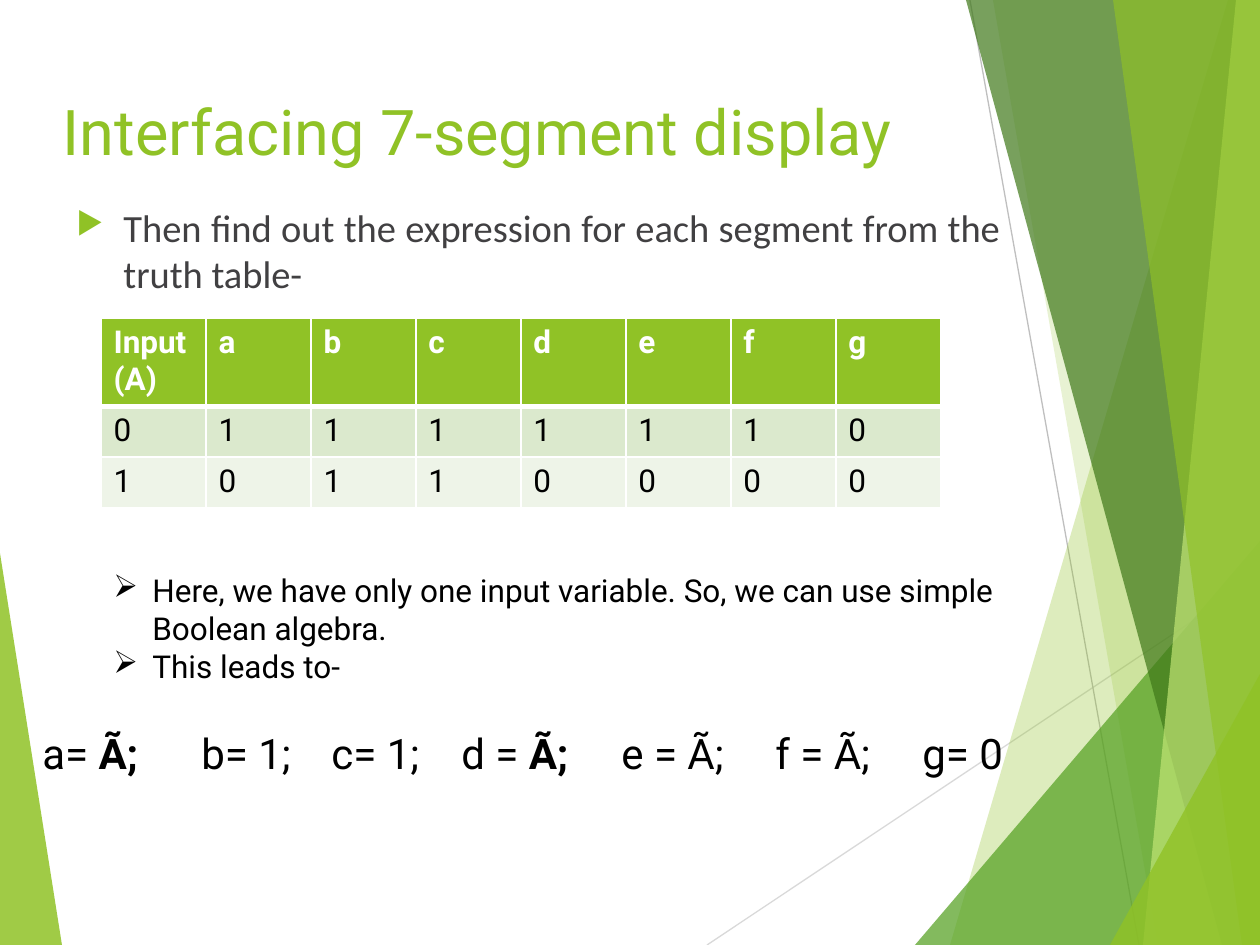
"""Build the slide on interfacing a 7-segment display."""
from lxml import etree
from pptx import Presentation
from pptx.dml.color import RGBColor
from pptx.enum.shapes import MSO_CONNECTOR
from pptx.enum.text import MSO_ANCHOR, MSO_AUTO_SIZE, PP_ALIGN
from pptx.oxml.ns import qn
from pptx.util import Pt

STRAIGHT = MSO_CONNECTOR.STRAIGHT
TOP = MSO_ANCHOR.TOP
NO_AUTOFIT = MSO_AUTO_SIZE.NONE
LEFT, JUSTIFY = PP_ALIGN.LEFT, PP_ALIGN.JUSTIFY

SCALE = 914400 / 126
WIDTH, HEIGHT = 1260, 945
TITLE_ONLY = 5
COLORS = {
    "lime": "90C226", "green": "54A021", "forest": "3F7819", "pale": "C0E474",
    "light_rule": "D9D9D9", "rule": "BFBFBF", "body": "414042",
    "black": "000000", "white": "FFFFFF", "band": "DBE9CD", "band_pale": "EEF4E8",
}
TRUTH_TABLE = [
    ["Input (A)", "a", "b", "c", "d", "e", "f", "g"],
    ["0", "1", "1", "1", "1", "1", "1", "0"],
    ["1", "0", "1", "1", "0", "0", "0", "0"],
]
NOTES = [
    "Here, we have only one input variable. So, we can use simple Boolean algebra.",
    "This leads to-",
]
EQUATIONS = [
    ("a=", False), (" Ã;", True), ("\tb= 1;\tc= 1;\td =", False),
    (" Ã;", True), ("\te = Ã;\tf = Ã;\tg= 0", False),
]
EQUATION_TABS = [159, 289, 419, 579, 733, 880]


def px(length):
    """Turn px into EMU."""
    return round(length * SCALE)


def rgb(color):
    """Return a named colour."""
    return RGBColor.from_string(COLORS[color])


def add_xml(parent, tag, **attributes):
    """Append a DrawingML element and return it."""
    names = {key: str(value) for key, value in attributes.items()}
    return etree.SubElement(parent, qn(f"a:{tag}"), names)


def write_text(paragraph, text, size=18, font="Roboto", color="black", bold=False):
    """Add a formatted run to a paragraph."""
    run = paragraph.add_run()
    run.text = text
    run.font.size, run.font.name, run.font.bold = Pt(size), font, bold
    run.font.color.rgb = rgb(color)


def add_bullet(paragraph, mark, margin, hang, color="black", percent=100):
    """Give a paragraph a hanging bullet."""
    properties = paragraph._p.get_or_add_pPr()
    properties.set("marL", str(px(margin)))
    properties.set("indent", str(-px(hang)))
    add_xml(add_xml(properties, "buClr"), "srgbClr", val=COLORS[color])
    add_xml(properties, "buSzPct", val=percent * 1000)
    add_xml(properties, "buChar", char=mark)


def add_frame(slide, box):
    """Add a wrapping text box and return its text frame."""
    frame = slide.shapes.add_textbox(*map(px, box)).text_frame
    frame.word_wrap = True
    return frame


def add_facet(slide, points, color, opacity):
    """Draw a translucent polygon."""
    builder = slide.shapes.build_freeform(*points[0], scale=SCALE)
    builder.add_line_segments(points[1:], close=True)
    facet = builder.convert_to_shape()
    facet.shadow.inherit = False
    facet.line.fill.background()
    facet.fill.solid()
    facet.fill.fore_color.rgb = rgb(color)
    tint = facet._element.spPr.find(qn("a:solidFill"))[0]
    add_xml(tint, "alpha", val=opacity * 1000)


def add_rule(slide, start, end, color):
    """Draw a thin decorative line."""
    rule = slide.shapes.add_connector(STRAIGHT, *map(px, start + end))
    rule.line.color.rgb = rgb(color)
    rule.line.width = Pt(0.75)
    add_xml(rule._element.spPr, "effectLst")


def add_decoration(slide, box):
    """Draw the facets and rules along the slide edges."""
    left, top, width, height = box
    right, bottom = left + width, top + height

    def band(upper, lower, color, opacity):
        """Fill from a slanted edge to the right side."""
        edge = [(left + upper, top), (left + lower, bottom)]
        add_facet(slide, edge + [(right, bottom), (right, top)], color, opacity)

    def wedge(start, rise, color, opacity):
        """Fill the lower right corner."""
        points = [(left + start, bottom), (right, top + rise), (right, bottom)]
        add_facet(slide, points, color, opacity)

    add_facet(slide, [(left, top + 553), (left + 62, bottom), (left, bottom)], "lime", 85)
    add_rule(slide, (left + 707, bottom), (right, top + 576), "light_rule")
    add_rule(slide, (left + 970, top), (left + 1139, bottom), "rule")
    band(1228, 950, "lime", 30)
    band(993, 1158, "lime", 20)
    wedge(915, 541, "green", 72)
    band(966, 1222, "forest", 70)
    band(1236, 1143, "pale", 70)
    band(1113, 1242, "lime", 65)
    wedge(1110, 674, "lime", 80)


def add_title(slide, box):
    """Place and format the title."""
    title = slide.shapes.title
    title.left, title.top, title.width, title.height = map(px, box)
    frame = title.text_frame
    frame.vertical_anchor, frame.auto_size = TOP, NO_AUTOFIT
    heading = frame.paragraphs[0]
    heading.alignment = LEFT
    write_text(heading, "Interfacing 7-segment display", size=36, color="lime")


def add_instruction(slide, box):
    """Add the bulleted instruction above the table."""
    instruction = add_frame(slide, box).paragraphs[0]
    instruction.alignment, instruction.space_before = JUSTIFY, Pt(10)
    add_bullet(instruction, "▶", 111, 47, "lime", 80)
    write_text(instruction, "Then find out the expression for each segment from the truth table-",
               size=22, font="Calibri", color="body")


def format_cell(cell, text, row):
    """Fill, border and write one truth table cell."""
    properties = cell._tc.get_or_add_tcPr()
    widths = {"lnL": 1, "lnR": 1, "lnT": 3 if row == 1 else 1, "lnB": 3 if row == 0 else 1}
    for side, width in widths.items():
        border = add_xml(properties, side, w=Pt(width))
        add_xml(add_xml(border, "solidFill"), "srgbClr", val=COLORS["white"])
    cell.fill.solid()
    cell.fill.fore_color.rgb = rgb(("lime", "band", "band_pale")[row])
    header = row == 0
    write_text(cell.text_frame.paragraphs[0], text, bold=header,
               color="white" if header else "black")


def add_truth_table(slide, box):
    """Add the truth table of the segments."""
    table = slide.shapes.add_table(len(TRUTH_TABLE), len(TRUTH_TABLE[0]), *map(px, box)).table
    for column in table.columns:
        column.width = px(box[2] / len(TRUTH_TABLE[0]))
    for row, height in zip(table.rows, (85, 51, 51)):
        row.height = px(height)
    for row, values in enumerate(TRUTH_TABLE):
        for column, value in enumerate(values):
            format_cell(table.cell(row, column), value, row)


def add_notes_list(slide, box):
    """Add the bulleted remarks below the table."""
    frame = add_frame(slide, box)
    for index, note in enumerate(NOTES):
        remark = frame.add_paragraph() if index else frame.paragraphs[0]
        add_bullet(remark, "➢", 39, 39)
        write_text(remark, note)


def add_equations(slide, box):
    """Add the row of segment expressions at tab stops."""
    equations = add_frame(slide, box).paragraphs[0]
    stops = add_xml(equations._p.get_or_add_pPr(), "tabLst")
    for position in EQUATION_TABS:
        add_xml(stops, "tab", pos=px(position), algn="l")
    for text, bold in EQUATIONS:
        write_text(equations, text, size=24, bold=bold)


def main():
    """Build and save the presentation."""
    deck = Presentation()
    deck.slide_width, deck.slide_height = px(WIDTH), px(HEIGHT)
    slide = deck.slides.add_slide(deck.slide_layouts[TITLE_ONLY])
    add_decoration(slide, (0, 0, WIDTH, HEIGHT))
    add_title(slide, (50, 86, 942, 181))
    add_instruction(slide, (0, 198, 1013, 552))
    add_truth_table(slide, (101, 318, 840, 187))
    add_notes_list(slide, (101, 565, 912, 127))
    add_equations(slide, (30, 721, 1109, 115))
    deck.save("out.pptx")


if __name__ == "__main__":
    main()
